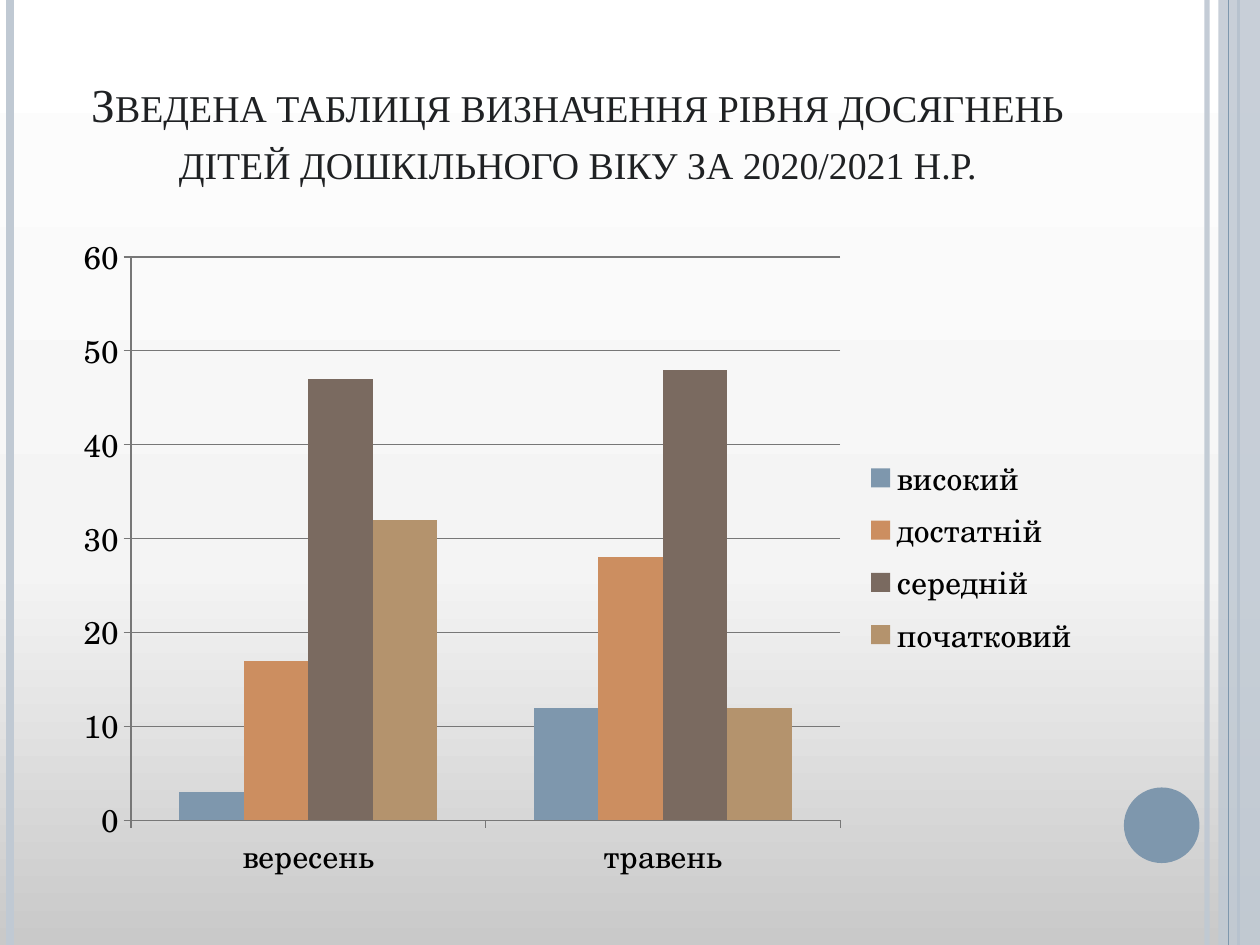
"""Build a slide with a clustered column chart of children's achievement levels."""
from copy import deepcopy
from lxml import etree
from pptx import Presentation
from pptx.chart import data
from pptx.dml.color import RGBColor
from pptx.enum import chart as ch, shapes, text
from pptx.oxml import ns
from pptx.util import Inches, Pt

BLUE = RGBColor(0x7E, 0x97, 0xAD)
ORANGE = RGBColor(0xCC, 0x8E, 0x60)
BROWN = RGBColor(0x7A, 0x6A, 0x60)
TAN = RGBColor(0xB4, 0x93, 0x6D)
PALE = RGBColor(0xC0, 0xC9, 0xD3)
INK = RGBColor(0x1F, 0x21, 0x23)
BLACK = RGBColor(0, 0, 0)
GRAY = RGBColor(0x77, 0x77, 0x77)
STOPS = [(0, RGBColor(0xC9, 0xC9, 0xC9)), (0.4, RGBColor(0xF4, 0xF4, 0xF4)),
         (1, RGBColor(0xFF, 0xFF, 0xFF))]


def add_rule(x, color, width, alpha=100):
    rule = slide.shapes.add_connector(
        shapes.MSO_CONNECTOR.STRAIGHT, Inches(x), 0, Inches(x), Inches(7.5))
    rule.line.color.rgb = color
    rule.line.width = Pt(width)
    etree.SubElement(rule._element.spPr, ns.qn("a:effectLst"))
    set_alpha(rule, alpha)


def set_alpha(shape, alpha):
    tint = shape._element.spPr.find(".//" + ns.qn("a:srgbClr"))
    etree.SubElement(tint, ns.qn("a:alpha")).set("val", str(alpha * 1000))


prs = Presentation()
prs.slide_width, prs.slide_height = Inches(10), Inches(7.5)
slide = prs.slides.add_slide(prs.slide_layouts[5])

back = slide.background.fill
back.gradient()
back.gradient_angle = 90
first = slide._element.find(".//" + ns.qn("a:gs"))
first.addnext(deepcopy(first))
for stop, (spot, color) in zip(back.gradient_stops, STOPS):
    stop.position = spot
    stop.color.rgb = color

add_rule(9.58, PALE, 3, 93)
add_rule(0.08, PALE, 4.5)
add_rule(9.83, BLUE, 1.5)
band = slide.shapes.add_shape(
    shapes.MSO_SHAPE.RECTANGLE, Inches(9.67), 0, Inches(0.33), Inches(7.5))
disc = slide.shapes.add_shape(
    shapes.MSO_SHAPE.OVAL, Inches(8.92), Inches(6.25), Inches(0.6), Inches(0.6))
for shape, color in ((band, PALE), (disc, BLUE)):
    shape.shadow.inherit = False
    shape.fill.solid()
    shape.fill.fore_color.rgb = color
    shape.line.fill.background()
set_alpha(band, 87)
add_rule(9.75, BLUE, 0.75)

title = slide.shapes.title
title.left, title.top = Inches(0.5), Inches(0.3)
title.width, title.height = Inches(8.17), Inches(1.25)
frame = title.text_frame
frame.text = ("Зведена таблиця визначення рівня досягнень "
              "дітей дошкільного віку за 2020/2021 н.р.")
frame.word_wrap = True
frame.auto_size = text.MSO_AUTO_SIZE.NONE
frame.vertical_anchor = text.MSO_ANCHOR.BOTTOM
para = frame.paragraphs[0]
para.alignment = text.PP_ALIGN.CENTER
run = para.runs[0]
run.font.size = Pt(27)
run.font.name = "Times New Roman"
run.font.color.rgb = INK
run.font._element.set("cap", "small")

levels = [("високий", (3, 12), BLUE), ("достатній", (17, 28), ORANGE),
          ("середній", (47, 48), BROWN), ("початковий", (32, 12), TAN)]
table = data.CategoryChartData()
table.categories = ["вересень", "травень"]
for name, vals, color in levels:
    table.add_series(name, vals)
chart = slide.shapes.add_chart(
    ch.XL_CHART_TYPE.COLUMN_CLUSTERED, Inches(0.5), Inches(1.75),
    Inches(8.17), Inches(5.33), table).chart
chart.font.size = Pt(18)
chart.font.name = "TeX Gyre Schola"
chart.font.color.rgb = BLACK
chart.has_title = False
chart.has_legend = True
chart.legend.position = ch.XL_LEGEND_POSITION.RIGHT
chart.legend.include_in_layout = False

plot = chart.plots[0]
plot.gap_width = 150
plot.overlap = 0
plot.vary_by_categories = False
for series, (name, vals, color) in zip(plot.series, levels):
    series.format.fill.solid()
    series.format.fill.fore_color.rgb = color

scale = chart.value_axis
scale.minimum_scale, scale.maximum_scale, scale.major_unit = 0, 60, 10
scale.has_major_gridlines = True
for axis in (scale, chart.category_axis):
    axis.major_tick_mark = ch.XL_TICK_MARK.OUTSIDE
    axis.minor_tick_mark = ch.XL_TICK_MARK.NONE
for part in (scale, chart.category_axis, scale.major_gridlines):
    part.format.line.color.rgb = GRAY
    part.format.line.width = Pt(0.75)

prs.save("out.pptx")
